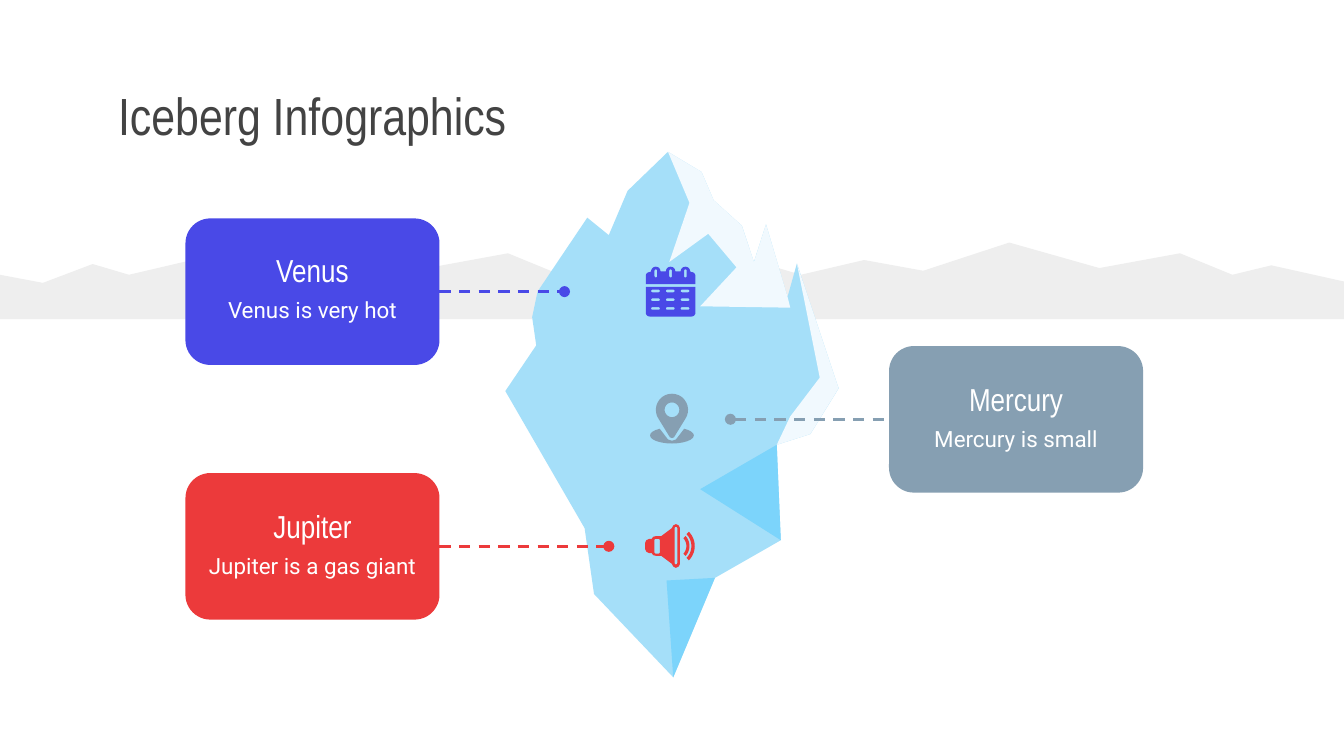
from math import cos, radians, sin

from lxml import etree
from pptx import Presentation
from pptx import util as u
from pptx.dml.color import RGBColor
from pptx.enum import dml, shapes, text
from pptx.oxml import ns

WIDTH = u.Inches(10)
HEIGHT = u.Emu(WIDTH * 9 // 16)
COLUMNS = 100
CELL = WIDTH / COLUMNS
HEADING_FONT, BODY_FONT = "Arial Narrow", "Roboto"
WHITE, DARK, GREY = "FFFFFF", "434343", "EEEEEE"
ICE, SNOW, SHADE = "A5DFF9", "F1F9FE", "7CD4FB"
BLUE, SLATE, RED = "4949E7", "869FB2", "EC3A3B"


def color(hex_string):
    return RGBColor.from_string(hex_string)


def cells(*values):
    return [u.Emu(round(value * CELL)) for value in values]


def paint(shape, fill):
    shape.shadow.inherit = False
    shape.fill.solid()
    shape.fill.fore_color.rgb = color(fill)
    shape.line.fill.background()


def arc(x, y, radius_x, radius_y, start, end, steps=20):
    angles = [radians(start + (end - start) * i / steps) for i in range(steps + 1)]
    return [(x + radius_x * cos(a), y + radius_y * sin(a)) for a in angles]


def rounded(x, y, width, height, radius):
    right, bottom = x + width - radius, y + height - radius
    corners = [(right, bottom), (x + radius, bottom),
               (x + radius, y + radius), (right, y + radius)]
    return [point for i, (cx, cy) in enumerate(corners)
            for point in arc(cx, cy, radius, radius, 90 * i, 90 * i + 90, 5)]


def crescent(x, y, outer, inner, spread):
    return (arc(x, y, outer, outer, -spread, spread)
            + arc(x, y, inner, inner, spread, -spread))


def add_outline(slide, box, contours, fill):
    left, top = box
    placed = [[cells(left + x, top + y) for x, y in contour] for contour in contours]
    builder = slide.shapes.build_freeform(*placed[0][0], scale=1.0)
    for i, contour in enumerate(placed):
        if i:
            builder.move_to(*contour[0])
        builder.add_line_segments(contour[1:], close=True)
    paint(builder.convert_to_shape(), fill)


def add_text(slide, box, words, size, font, fill, align):
    frame = slide.shapes.add_textbox(*cells(*box)).text_frame
    frame.word_wrap = True
    frame.vertical_anchor = text.MSO_ANCHOR.MIDDLE
    frame.margin_left = frame.margin_right = u.Inches(0.1)
    frame.margin_top = frame.margin_bottom = u.Inches(0.1)
    frame.text = words
    paragraph = frame.paragraphs[0]
    paragraph.alignment = align
    run = paragraph.runs[0]
    run.font.size = u.Pt(size)
    run.font.name = font
    run.font.color.rgb = color(fill)


def add_mountains(slide, box):
    period = COLUMNS / 2
    peaks = [(3.2, 3), (6.9, 1.6), (9.6, 2.4), (14.3, 1.3), (18.7, 2.1), (25.1, 0),
             (31.8, 1.9), (37.8, 0.8), (41.7, 2.4), (44.6, 1.7)]
    ridge = [(x + shift, y) for shift in (0, period) for x, y in peaks]
    contour = [(0, 5.7), (0, 2.4), *ridge, (COLUMNS, 2.9), (COLUMNS, 5.7)]
    add_outline(slide, box, [contour], GREY)


def add_iceberg(slide, box):
    tip, foot, keel = (12.1, 0), (12.5, 39.1), (15.6, 31.7)
    notch, ledge, shoulder = (20.2, 21.8), (20.5, 28.9), (21.7, 8.3)
    ridge = [(21, 10.8), (19.4, 5.4), (18.5, 8.2), (17.6, 5.5), (15.5, 3.6), (14.6, 1.5)]
    edge = [notch, (22.7, 21), (24.8, 17.6), shoulder]
    body = [tip, (9.1, 2.9), (7.7, 6.2), (6.1, 4.9), (2.4, 10.4), (2, 12.3),
            (2.3, 14.4), (0, 17.8), (5.9, 28), (6.6, 32.9), foot, keel, ledge,
            *edge, *ridge]
    cap = [tip, (13.7, 3.8), (12.2, 8.2), (15.1, 6.1), (17.2, 8.6), (14.5, 11.5),
           (21.2, 11.6), *ridge]
    facets = [(body, ICE), (cap, SNOW), ([keel, (12, 31.9), foot], SHADE),
              ([notch, (14.5, 25.1), ledge], SHADE),
              ([*edge, (23.4, 16.8), (21.2, 19.7)], SNOW)]
    for contour, fill in facets:
        add_outline(slide, box, [contour], fill)


def add_pin(slide, box, fill):
    head = arc(1.6, 1.2, 1.2, 1.2, 145, 395) + [(1.75, 3.25), (1.6, 3.3), (1.45, 3.25)]
    hole = arc(1.6, 1.2, 0.55, 0.55, 0, 360)
    base = arc(1.6, 3.1, 1.63, 0.6, -56, 236) + [(1.3, 3.4), (1.6, 3.5), (1.9, 3.4)]
    add_outline(slide, box, [head, hole], fill)
    add_outline(slide, box, [base], fill)


def add_speaker(slide, box, fill):
    middle = 1.63
    upper = [(0, 1.4), (0.1, 1.2), (0.3, 1.1), (0.5, 1.1), (0.6, 0.95), (0.8, 0.9),
             (1.2, 0.9), (2, 0.3), (2.1, 0.1), (2.3, 0), (2.5, 0.1), (2.6, 0.3)]
    lower = [(x, 2 * middle - y) for x, y in reversed(upper)]
    holes = [rounded(0.7, 1.1, 0.4, 1.1, 0.1), rounded(2.2, 0.2, 0.2, 2.8, 0.1)]
    add_outline(slide, box, [crescent(2.2, middle, 1.5, 1.25, 45)], fill)
    add_outline(slide, box, [crescent(2.2, middle, 1.1, 0.87, 42)], fill)
    add_outline(slide, box, [upper + lower, *holes], fill)


def add_calendar(slide, box, fill):
    side, corner = 3.7, 0.3
    lefts = [0.4 + 1.1 * i for i in range(3)]
    slots = [rounded(x, 1.7 + 0.65 * row, 0.65, 0.2, 0.1)
             for row in range(3) for x in lefts]
    page = [(0, 1.5), (side, 1.5),
            *arc(side - corner, side - corner, corner, corner, 0, 90),
            *arc(corner, side - corner, corner, corner, 90, 180)]
    tabs = [point for x in lefts for point in arc(x + 0.35, 0.35, 0.35, 0.35, 180, 360)]
    header = [(0, 1.3), *arc(corner, 0.7, corner, corner, 180, 270), *tabs,
              *arc(side - corner, 0.7, corner, corner, 270, 360), (side, 1.3)]
    rings = [rounded(x + 0.25, 0.2, 0.2, 0.6, 0.1) for x in lefts]
    add_outline(slide, box, [page, *slots], fill)
    add_outline(slide, box, [header, *rings], fill)


def add_callout(slide, box, dot, heading, body, fill, text_top):
    left, top, width, height = box
    card = slide.shapes.add_shape(shapes.MSO_SHAPE.ROUNDED_RECTANGLE, *cells(*box))
    card.adjustments[0] = 0.17
    paint(card, fill)

    on_left = dot > left
    start, end = (left + width, dot) if on_left else (dot, left)
    middle = top + height / 2
    connector = slide.shapes.add_connector(
        shapes.MSO_CONNECTOR.STRAIGHT, *cells(start, middle, end, middle))
    connector.line.color.rgb = color(fill)
    connector.line.width = u.Pt(1.5)
    connector.line.dash_style = dml.MSO_LINE.DASH
    properties = connector.line._get_or_add_ln()
    marker = "a:tailEnd" if on_left else "a:headEnd"
    etree.SubElement(properties, ns.qn(marker), type="oval")
    etree.SubElement(connector._element.spPr, ns.qn("a:effectLst"))

    rows = [(body, 12, BODY_FONT, text_top + 2.95), (heading, 17, HEADING_FONT, text_top)]
    for words, size, font, offset in rows:
        add_text(slide, (left + 0.2, top + offset, width - 0.4, 4),
                 words, size, font, WHITE, text.PP_ALIGN.CENTER)


def main():
    presentation = Presentation()
    presentation.slide_width, presentation.slide_height = WIDTH, HEIGHT
    slide = presentation.slides.add_slide(presentation.slide_layouts[6])
    add_mountains(slide, (0, 18.05))
    add_text(slide, (7.8, 5.9, 84.5, 5.3), "Iceberg Infographics", 28,
             HEADING_FONT, DARK, text.PP_ALIGN.LEFT)
    add_iceberg(slide, (37.6, 11.3))
    planets = [
        ("Mercury", "Mercury is small", SLATE, (66.15, 25.75), 54.35, 1.95,
         add_pin, (48.4, 29.3)),
        ("Jupiter", "Jupiter is a gas giant", RED, (13.8, 35.2), 45.3, 1.95,
         add_speaker, (48, 39)),
        ("Venus", "Venus is very hot", BLUE, (13.8, 16.25), 42, 1.85,
         add_calendar, (48.05, 19.85)),
    ]
    for heading, body, fill, corner, dot, text_top, add_icon, icon_box in planets:
        add_icon(slide, icon_box, fill)
        add_callout(slide, (*corner, 18.9, 10.9), dot, heading, body, fill, text_top)
    presentation.save("out.pptx")


if __name__ == "__main__":
    main()
